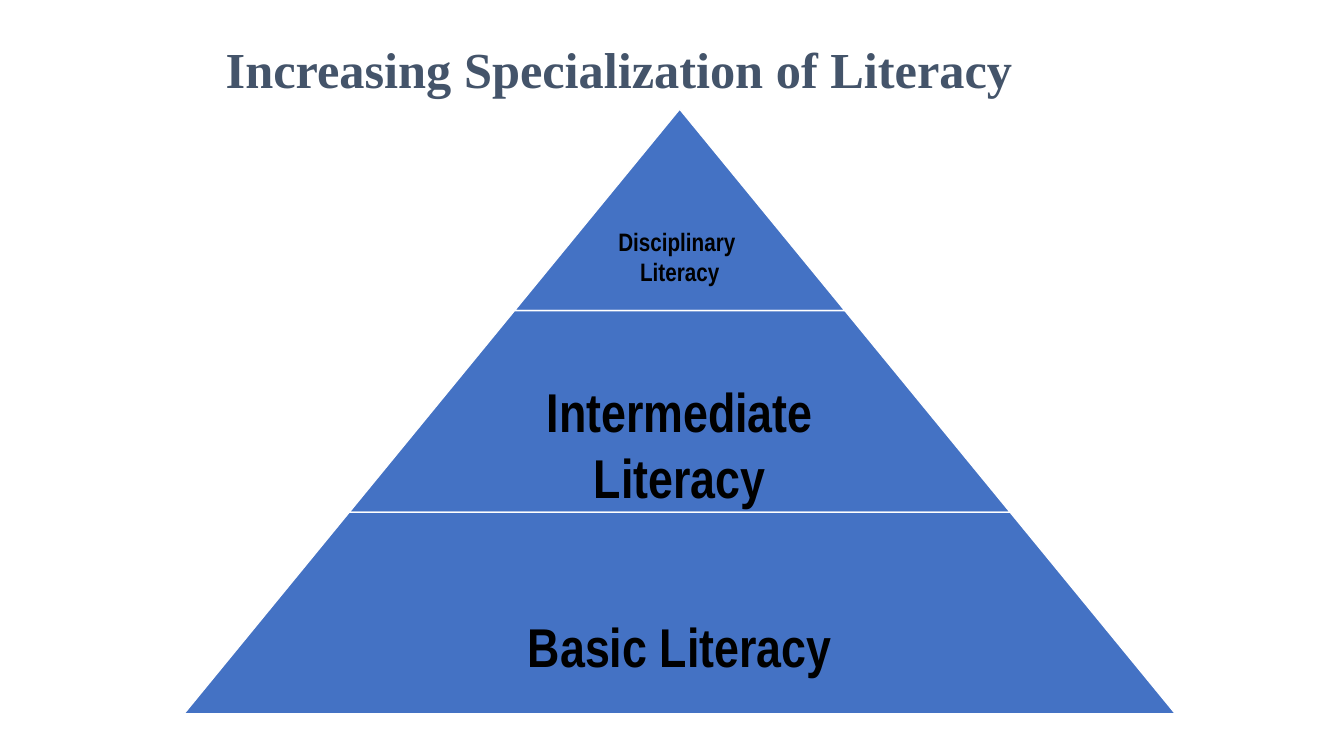
from dataclasses import dataclass

from pptx import Presentation
from pptx.dml.color import RGBColor
from pptx.enum.shapes import MSO_SHAPE
from pptx.enum.text import MSO_ANCHOR, MSO_AUTO_SIZE, PP_ALIGN
from pptx.slide import Slide
from pptx.text.text import TextFrame
from pptx.util import Cm, Length, Pt

TRAPEZOID = MSO_SHAPE.TRAPEZOID
BOTTOM = MSO_ANCHOR.BOTTOM
TOP = MSO_ANCHOR.TOP
GROW = MSO_AUTO_SIZE.SHAPE_TO_FIT_TEXT
FIXED = MSO_AUTO_SIZE.NONE
LEFT = PP_ALIGN.LEFT
CENTER = PP_ALIGN.CENTER


@dataclass(frozen=True)
class Theme:
    tier_fill: RGBColor = RGBColor(0x44, 0x72, 0xC4)
    tier_edge: RGBColor = RGBColor(0xFF, 0xFF, 0xFF)
    label_color: RGBColor = RGBColor(0x00, 0x00, 0x00)
    heading_color: RGBColor = RGBColor(0x44, 0x54, 0x6A)
    label_font: str = "Arial Narrow"
    heading_font: str = "Times New Roman"
    small_label: Length = Pt(18)
    large_label: Length = Pt(39)
    heading_size: Length = Pt(36)
    edge_width: Length = Pt(1)


@dataclass(frozen=True)
class Tier:
    lines: tuple[str, ...]
    size: Length
    label_share: float
    side_inset: Length
    bottom_inset: Length


THEME = Theme()
APEX_X = Cm(17.13)
APEX_Y = Cm(2.75)
TIER_HEIGHT = Cm(5.08)
WIDTH_STEP = Cm(8.33)
SLOPE = WIDTH_STEP / 2 / TIER_HEIGHT

TIERS = (
    Tier(("Disciplinary ", "Literacy"), THEME.small_label, 1.0, Cm(0.08), Cm(0.61)),
    Tier(("Intermediate Literacy",), THEME.large_label, 0.65, Cm(0.13), Cm(0.08)),
    Tier(("Basic Literacy",), THEME.large_label, 0.65, Cm(0.13), Cm(0.9)),
)


def apply(target: object, formats: dict[str, object]) -> None:
    for name, value in formats.items():
        setattr(target, name, value)


def write_lines(frame: TextFrame, lines: tuple[str, ...], align: PP_ALIGN,
                font_formats: dict[str, object]) -> None:
    for index, line in enumerate(lines):
        paragraph = frame.add_paragraph() if index else frame.paragraphs[0]
        paragraph.alignment = align
        run = paragraph.add_run()
        run.text = line
        apply(run.font, {"bold": True, **font_formats})
        run.font.color.rgb = (
            THEME.heading_color if run.font.name == THEME.heading_font else THEME.label_color
        )


def draw_tier(slide: Slide, tier: Tier, rank: int) -> None:
    width = WIDTH_STEP * rank
    top = APEX_Y + TIER_HEIGHT * (rank - 1)
    band = slide.shapes.add_shape(TRAPEZOID, APEX_X - width // 2, top, width, TIER_HEIGHT)
    band.adjustments[0] = SLOPE
    band.shadow.inherit = False
    band.fill.solid()
    band.fill.fore_color.rgb = THEME.tier_fill
    band.line.color.rgb = THEME.tier_edge
    band.line.width = THEME.edge_width

    label_width = int(width * tier.label_share)
    label = slide.shapes.add_textbox(APEX_X - label_width // 2, top, label_width, TIER_HEIGHT)
    apply(label.text_frame, {
        "word_wrap": True,
        "auto_size": FIXED,
        "vertical_anchor": BOTTOM,
        "margin_left": tier.side_inset,
        "margin_right": tier.side_inset,
        "margin_top": tier.side_inset,
        "margin_bottom": tier.bottom_inset,
    })
    write_lines(label.text_frame, tier.lines, CENTER,
                {"name": THEME.label_font, "size": tier.size})


def draw_heading(slide: Slide, text: str) -> None:
    heading = slide.shapes.add_textbox(Cm(5.44), Cm(0.84), Cm(20.52), Cm(1.78))
    apply(heading.text_frame, {"word_wrap": True, "auto_size": GROW, "vertical_anchor": TOP})
    write_lines(heading.text_frame, (text,), LEFT,
                {"name": THEME.heading_font, "size": THEME.heading_size})


def main() -> None:
    presentation = Presentation()
    apply(presentation, {"slide_width": Cm(33.87), "slide_height": Cm(19.05)})
    slide = presentation.slides.add_slide(presentation.slide_layouts[6])
    for rank, tier in enumerate(TIERS, start=1):
        draw_tier(slide, tier, rank)
    draw_heading(slide, "Increasing Specialization of Literacy")
    presentation.save("out.pptx")


if __name__ == "__main__":
    main()
